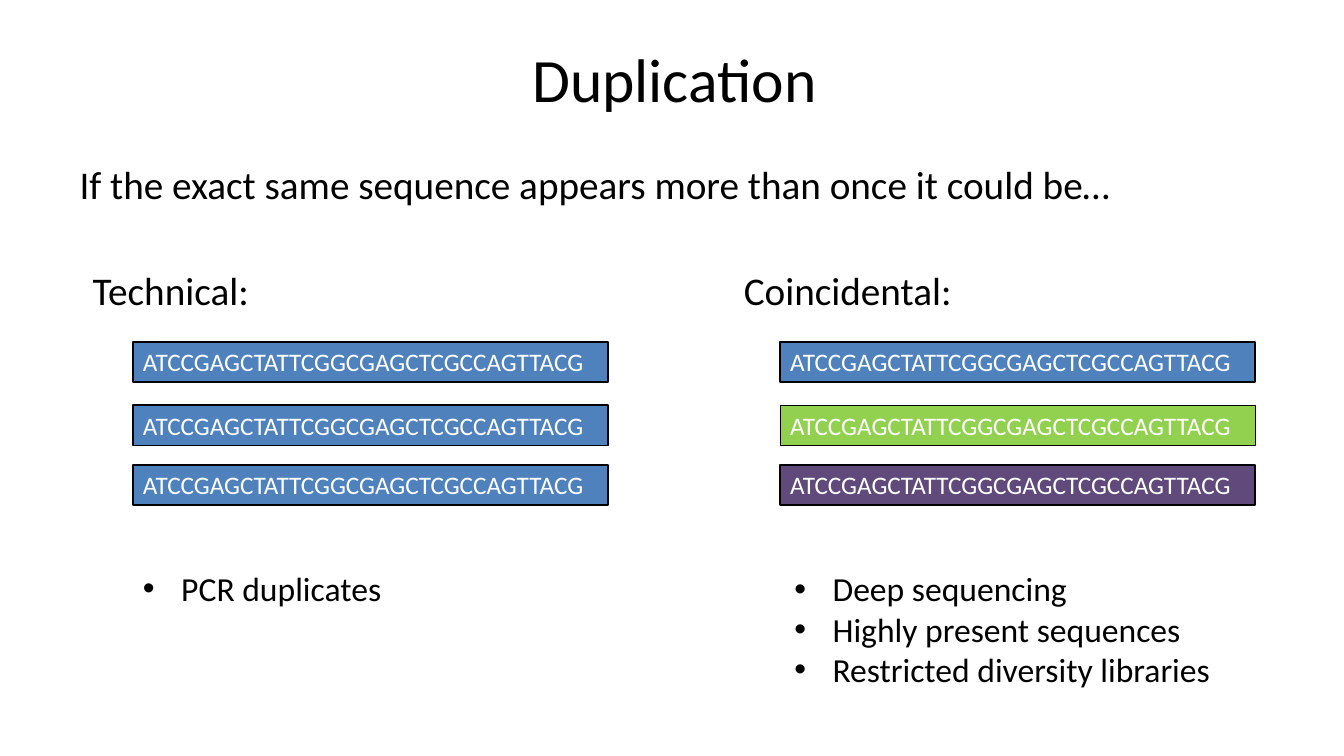
"""Build the slide on technical and coincidental sequence duplication."""
from dataclasses import dataclass

from lxml import etree
from pptx import Presentation
from pptx import util as u
from pptx.dml.color import RGBColor
from pptx.enum import shapes, text
from pptx.oxml.ns import qn

WIDTH, HEIGHT = u.Inches(13.33), u.Inches(7.5)
FONT, BLACK, WHITE = "Calibri", "000000", "FFFFFF"
BLUE, GREEN, PURPLE = "4F81BD", "92D050", "604A7B"
SEQUENCE = "ATCCGAGCTATTCGGCGAGCTCGCCAGTTACG"
READ_ROWS = (45.2, 53.6, 61.47)


@dataclass(frozen=True)
class Area:
    """A rectangle in hundredths of the slide's width and height."""
    left: float
    top: float
    width: float
    height: float

    def place(self) -> tuple[int, int, int, int]:
        """Return left, top, width and height in slide units."""
        return (int(WIDTH * self.left / 100), int(HEIGHT * self.top / 100),
                int(WIDTH * self.width / 100), int(HEIGHT * self.height / 100))


@dataclass(frozen=True)
class Cause:
    """One cause of duplication: heading, coloured reads and examples."""
    heading: str
    heading_left: float
    reads_left: float
    reads: tuple[tuple[str, float], ...]
    examples: tuple[str, ...]
    examples_area: Area


CAUSES = (
    Cause("Technical:", 6.15, 9.9, ((BLUE, 1.25),) * 3,
          ("PCR duplicates",), Area(9.9, 74.4, 21, 6.67)),
    Cause("Coincidental:", 54.61, 58.06,
          ((BLUE, 1.25), (GREEN, 0.75), (PURPLE, 1.25)),
          ("Deep sequencing", "Highly present sequences",
           "Restricted diversity libraries"), Area(58.36, 74.53, 37.96, 17.47)),
)


def color(value: str) -> RGBColor:
    """Turn a hex string into a colour."""
    return RGBColor.from_string(value)


def add_bullet(para) -> None:
    """Give a paragraph a hanging round bullet."""
    properties = para._p.get_or_add_pPr()
    indent = u.Inches(0.38)
    properties.set("marL", str(indent))
    properties.set("indent", str(-indent))
    etree.SubElement(properties, qn("a:buFont")).set("typeface", "Arial")
    etree.SubElement(properties, qn("a:buChar")).set("char", "•")


def write(box, lines: tuple[str, ...], size: float, ink: str = BLACK,
          align=text.PP_ALIGN.LEFT, anchor=text.MSO_ANCHOR.TOP,
          bullets: bool = False) -> None:
    """Fill a shape with formatted paragraphs."""
    frame = box.text_frame
    frame.text = "\n".join(lines)
    frame.word_wrap = True
    frame.vertical_anchor = anchor
    for para in frame.paragraphs:
        para.alignment = align
        if bullets:
            add_bullet(para)
        for span in para.runs:
            span.font.name = FONT
            span.font.size = u.Pt(size)
            span.font.color.rgb = color(ink)


def add_read(page, area: Area, fill: str, line_width: float) -> None:
    """Draw one sequencing read as a labelled bar."""
    bar = page.shapes.add_shape(shapes.MSO_SHAPE.RECTANGLE, *area.place())
    bar.shadow.inherit = False
    bar.fill.solid()
    bar.fill.fore_color.rgb = color(fill)
    bar.line.color.rgb = color(BLACK)
    bar.line.width = u.Pt(line_width)
    write(bar, (SEQUENCE,), 18, WHITE, anchor=text.MSO_ANCHOR.MIDDLE)


def add_cause(page, cause: Cause) -> None:
    """Draw one half of the slide."""
    heading = page.shapes.add_textbox(
        *Area(cause.heading_left, 34.53, 18.15, 9.47).place())
    write(heading, (cause.heading,), 28)
    for row, (fill, line_width) in zip(READ_ROWS, cause.reads):
        add_read(page, Area(cause.reads_left, row, 35.33, 5.33), fill, line_width)
    examples = page.shapes.add_textbox(*cause.examples_area.place())
    write(examples, cause.examples, 24, bullets=True)


def main() -> None:
    """Build and save the deck."""
    deck = Presentation()
    deck.slide_width, deck.slide_height = WIDTH, HEIGHT
    page = deck.slides.add_slide(deck.slide_layouts[5])
    title = page.shapes.title
    title.left, title.top, title.width, title.height = Area(5.18, 2, 90.02, 16.67).place()
    write(title, ("Duplication",), 44, align=text.PP_ALIGN.CENTER,
          anchor=text.MSO_ANCHOR.MIDDLE)
    intro = page.shapes.add_textbox(*Area(5.18, 20.53, 85.6, 9.47).place())
    write(intro, ("If the exact same sequence appears more than once it could be…",), 28)
    for cause in CAUSES:
        add_cause(page, cause)
    deck.save("out.pptx")


if __name__ == "__main__":
    main()
